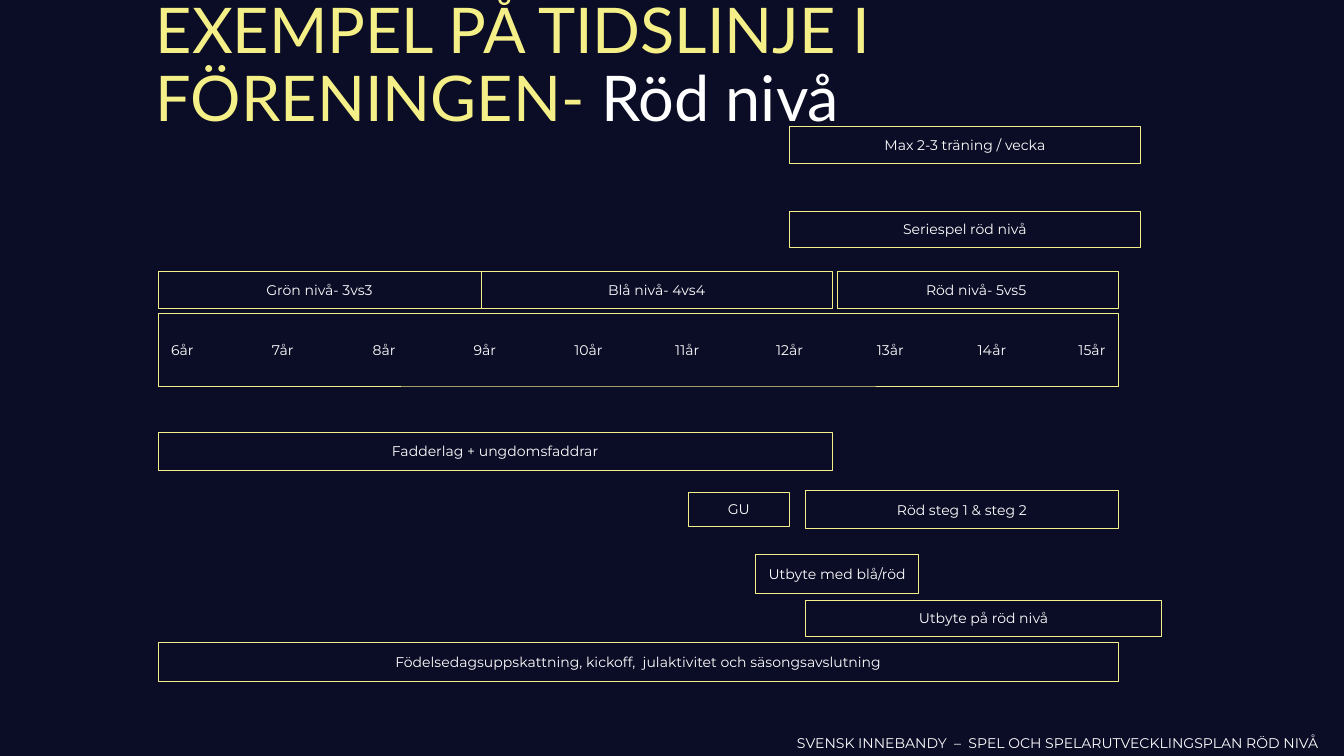
import dataclasses
import lxml.etree
import pptx
import pptx.dml.color
import pptx.enum.shapes
import pptx.enum.text
import pptx.oxml.ns
import pptx.util

Pt = pptx.util.Pt
Align = pptx.enum.text.PP_ALIGN
Anchor = pptx.enum.text.MSO_ANCHOR


@dataclasses.dataclass(frozen=True)
class Theme:
    back: str = "0B0C26"
    gold: str = "F5EF88"
    white: str = "FFFFFF"
    head: str = "Lato"
    body: str = "Montserrat"
    large: int = 90
    small: int = 20
    edge: float = 0.6


def color(code):
    return pptx.dml.color.RGBColor.from_string(code)


def assign(item, values):
    for name, value in values.items():
        setattr(item, name, value)


class Deck:
    def __init__(self, theme, slide):
        self.theme = theme
        self.slide = slide
        slide.background.fill.solid()
        slide.background.fill.fore_color.rgb = color(theme.back)

    def words(self, para, text, tint, **style):
        """Add a run of text to a paragraph."""
        run = para.add_run()
        run.text = text
        base = {"name": self.theme.body, "size": Pt(self.theme.small)}
        assign(run.font, base | style)
        run.font.color.rgb = color(tint)

    def box(self, text, *area, fill=None):
        """Draw a framed bar with centred text and return its paragraph."""
        kind = pptx.enum.shapes.MSO_SHAPE.RECTANGLE
        bar = self.slide.shapes.add_shape(kind, *map(Pt, area))
        bar.shadow.inherit = False
        if fill:
            bar.fill.solid()
            bar.fill.fore_color.rgb = color(fill)
        else:
            bar.fill.background()
        bar.line.color.rgb = color(self.theme.gold)
        bar.line.width = Pt(self.theme.edge)
        assign(bar.text_frame, {"word_wrap": True,
                                "vertical_anchor": Anchor.MIDDLE})
        para = bar.text_frame.paragraphs[0]
        para.alignment = Align.CENTER
        self.words(para, text, self.theme.white)
        return para

    def scale(self, marks, step, *area):
        """Draw a bar with its marks on evenly spaced tab stops."""
        para = self.box("\t".join(marks), *area, fill=self.theme.back)
        name = pptx.oxml.ns.qn
        stops = lxml.etree.SubElement(para._p.get_or_add_pPr(),
                                      name("a:tabLst"))
        for i in range(1, len(marks)):
            lxml.etree.SubElement(stops, name("a:tab"),
                                  pos=str(int(Pt(step * i))), algn="l")

    def label(self, parts, *area, anchor=Anchor.TOP, space=1.0, **style):
        frame = self.slide.shapes.add_textbox(*map(Pt, area)).text_frame
        assign(frame, {"word_wrap": True, "vertical_anchor": anchor})
        para = frame.paragraphs[0]
        para.line_spacing = space
        for text, tint in parts:
            self.words(para, text, tint, **style)


LEFT, FULL = 225.4, 1372.3
MID, LATE = 1127.5, 1150.6
BARS = [
    ("Fadderlag + ungdomsfaddrar", LEFT, 617.8, 963.4, 53.3),
    ("Max 2-3 träning / vecka", MID, 180.7, 501.1, 51.8),
    ("Blå nivå- 4vs4", 686.9, 388.1, 501.8, 52.6),
    ("Röd nivå- 5vs5 ", 1195.9, 387.4, 401.8, 53.3),
    ("GU", 982.8, 702.7, 144.7, 49.7),
    ("Röd steg 1 & steg 2", LATE, 700.6, 446.4, 54.7),
    ("Utbyte på röd nivå", LATE, 857.5, 508.3, 51.1),
    ("Födelsedagsuppskattning, kickoff,  julaktivitet och säsongsavslutning",
     LEFT, 918, FULL, 54.7),
    ("Grön nivå- 3vs3", LEFT, 387.4, 461.5, 53.3),
    ("Utbyte med blå/röd", 1079.3, 791.3, 232.6, 56.9),
    ("Seriespel röd nivå", MID, 301.7, 501.1, 51.8),
]


def main():
    show = pptx.Presentation()
    assign(show, {"slide_width": Pt(1919.5), "slide_height": Pt(1080)})
    theme = Theme()
    deck = Deck(theme, show.slides.add_slide(show.slide_layouts[6]))

    foot = "SVENSK INNEBANDY  –  SPEL OCH SPELARUTVECKLINGSPLAN RÖD NIVÅ"
    deck.label([(foot, theme.white)], 1131.1, 1045.4, 813.6, 31.7)
    ages = [f"{age}år" for age in range(6, 16)]
    deck.scale(ages, 144, LEFT, 447.8, FULL, 103.7)
    for bar in BARS:
        deck.box(*bar)
    deck.label([("EXEMPEL PÅ TIDSLINJE I FÖRENINGEN- ", theme.gold),
                ("Röd nivå", theme.white)],
               215.3, 41.8, 1656, 107.3, anchor=Anchor.MIDDLE, space=0.9,
               name=theme.head, size=Pt(theme.large))
    show.save("out.pptx")


if __name__ == "__main__":
    main()
